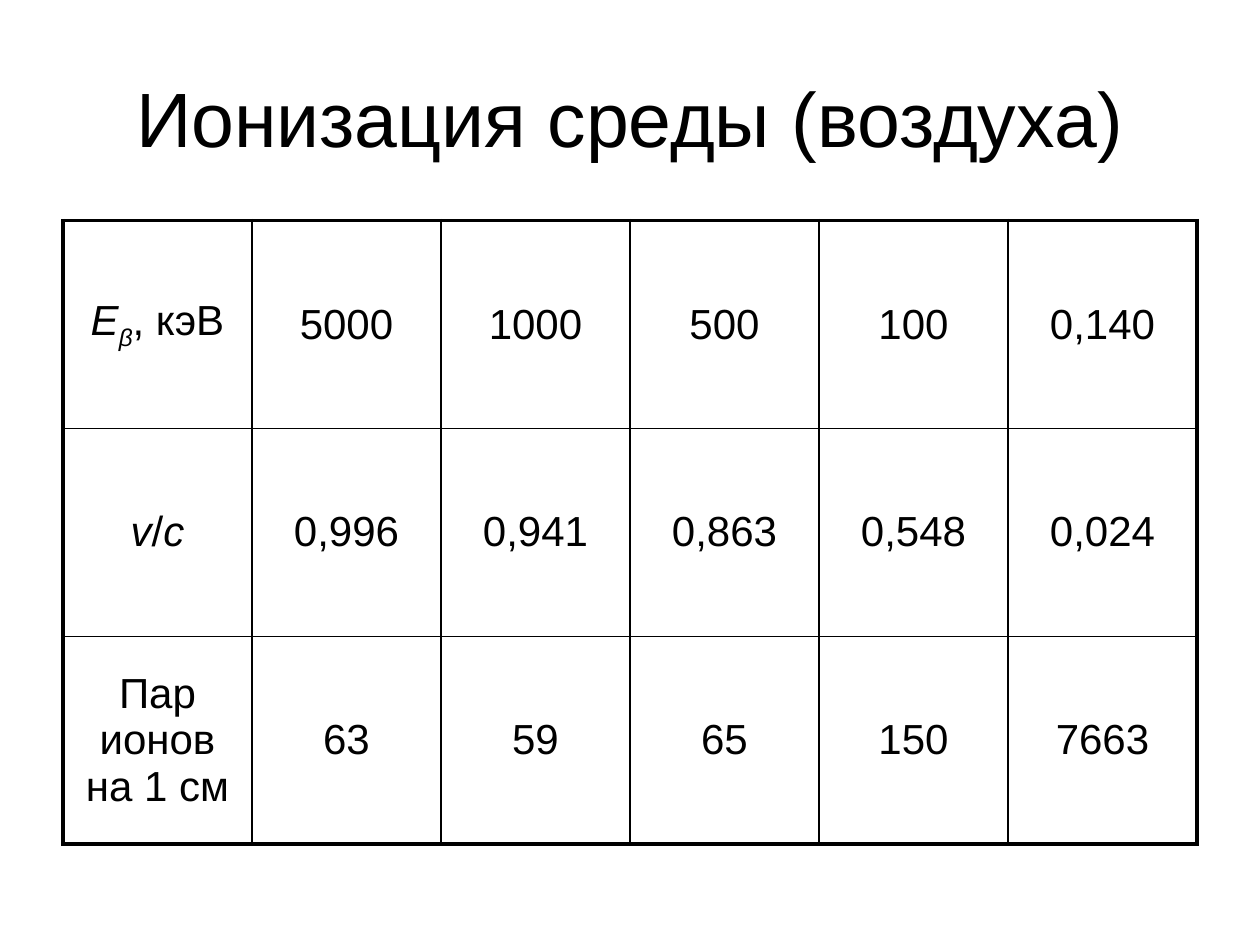
from dataclasses import dataclass

from lxml import etree
from pptx import Presentation
from pptx.dml.color import RGBColor
from pptx.enum.text import MSO_ANCHOR, PP_ALIGN
from pptx.oxml.ns import qn
from pptx.util import Inches, Pt

CENTER = PP_ALIGN.CENTER
MIDDLE = MSO_ANCHOR.MIDDLE


@dataclass(frozen=True)
class Theme:
    font: str = "Arial"
    ink: str = "000000"
    paper: str = "FFFFFF"
    title_size: float = 44
    cell_size: float = 24
    outer_line: float = 2.25
    inner_line: float = 1


THEME = Theme()
TITLE = "Ионизация среды (воздуха)"
# A cell is a list of (text, style) spans; styles: "" plain, "i" italic, "s" italic subscript.
HEADINGS = [
    [("E", "i"), ("β", "s"), (", кэВ", "")],
    [("v", "i"), ("/", ""), ("c", "i")],
    [("Пар ионов на 1 см", "")],
]
VALUES = [
    ["5000", "1000", "500", "100", "0,140"],
    ["0,996", "0,941", "0,863", "0,548", "0,024"],
    ["63", "59", "65", "150", "7663"],
]


def style_paragraph(para, size):
    para.alignment = CENTER
    para.font.name = THEME.font
    para.font.size = Pt(size)
    para.font.color.rgb = RGBColor.from_string(THEME.ink)


def add_title(page, left, top, width, height):
    box = page.shapes.add_textbox(left, top, width, height)
    frame = box.text_frame
    frame.word_wrap = True
    frame.vertical_anchor = MIDDLE
    frame.text = TITLE
    style_paragraph(frame.paragraphs[0], THEME.title_size)


def set_border(cell, side, width):
    """Draw one side of a cell; side is L, R, T or B."""
    line = etree.SubElement(cell._tc.get_or_add_tcPr(), qn(f"a:ln{side}"), w=str(Pt(width)))
    fill = etree.SubElement(line, qn("a:solidFill"))
    etree.SubElement(fill, qn("a:srgbClr"), val=THEME.ink)


def fill_cell(cell, spans):
    cell.vertical_anchor = MIDDLE
    cell.margin_left = cell.margin_right = Inches(0.1)
    cell.margin_top = cell.margin_bottom = Inches(0.05)
    para = cell.text_frame.paragraphs[0]
    spacing = etree.SubElement(para._p.get_or_add_pPr(), qn("a:spcBef"))
    etree.SubElement(spacing, qn("a:spcPct"), val="20000")
    style_paragraph(para, THEME.cell_size)
    for text, style in spans:
        span = para.add_run()
        span.text = text
        if style:
            span.font.italic = True
        if style == "s":
            span.font._element.set("baseline", "-25000")


def add_ionization_table(page, left, top, width, height):
    row_count, column_count = len(VALUES), len(VALUES[0]) + 1
    table = page.shapes.add_table(row_count, column_count, left, top, width, height).table
    table.first_row = table.horz_banding = False
    for r, (heading, values) in enumerate(zip(HEADINGS, VALUES)):
        row_spans = [heading] + [[(value, "")] for value in values]
        for c, spans in enumerate(row_spans):
            cell = table.cell(r, c)
            fill_cell(cell, spans)
            outer_sides = {
                "L": c == 0,
                "R": c == column_count - 1,
                "T": r == 0,
                "B": r == row_count - 1,
            }
            for side, is_outer in outer_sides.items():
                set_border(cell, side, THEME.outer_line if is_outer else THEME.inner_line)
            cell.fill.background()


def main():
    deck = Presentation()
    deck.slide_width, deck.slide_height = Inches(10), Inches(7.5)
    page = deck.slides.add_slide(deck.slide_layouts[6])
    background = page.background.fill
    background.solid()
    background.fore_color.rgb = RGBColor.from_string(THEME.paper)
    add_title(page, Inches(0.5), Inches(0.3), Inches(9), Inches(1.25))
    add_ionization_table(page, Inches(0.5), Inches(1.75), Inches(9), Inches(4.95))
    deck.save("out.pptx")


if __name__ == "__main__":
    main()
